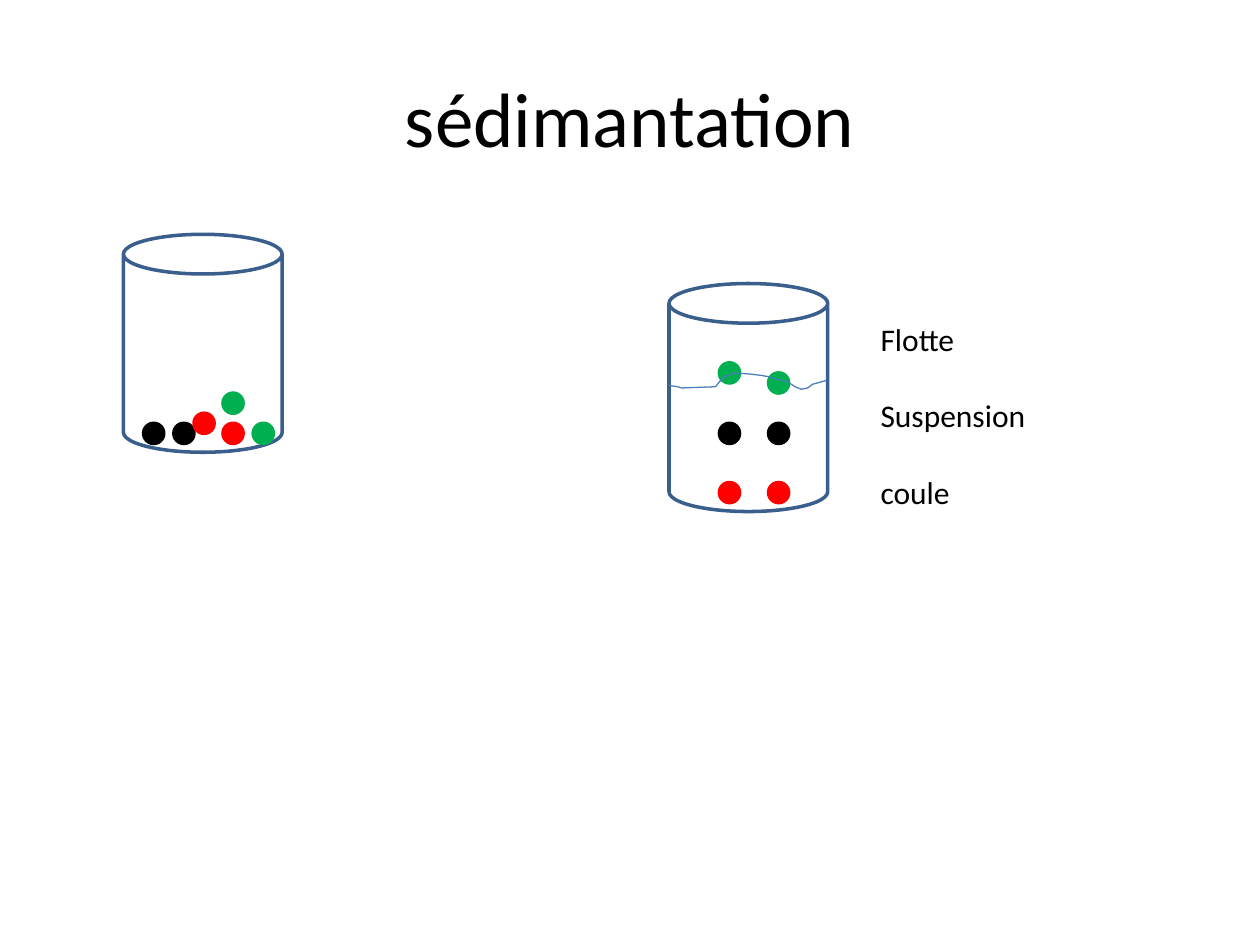
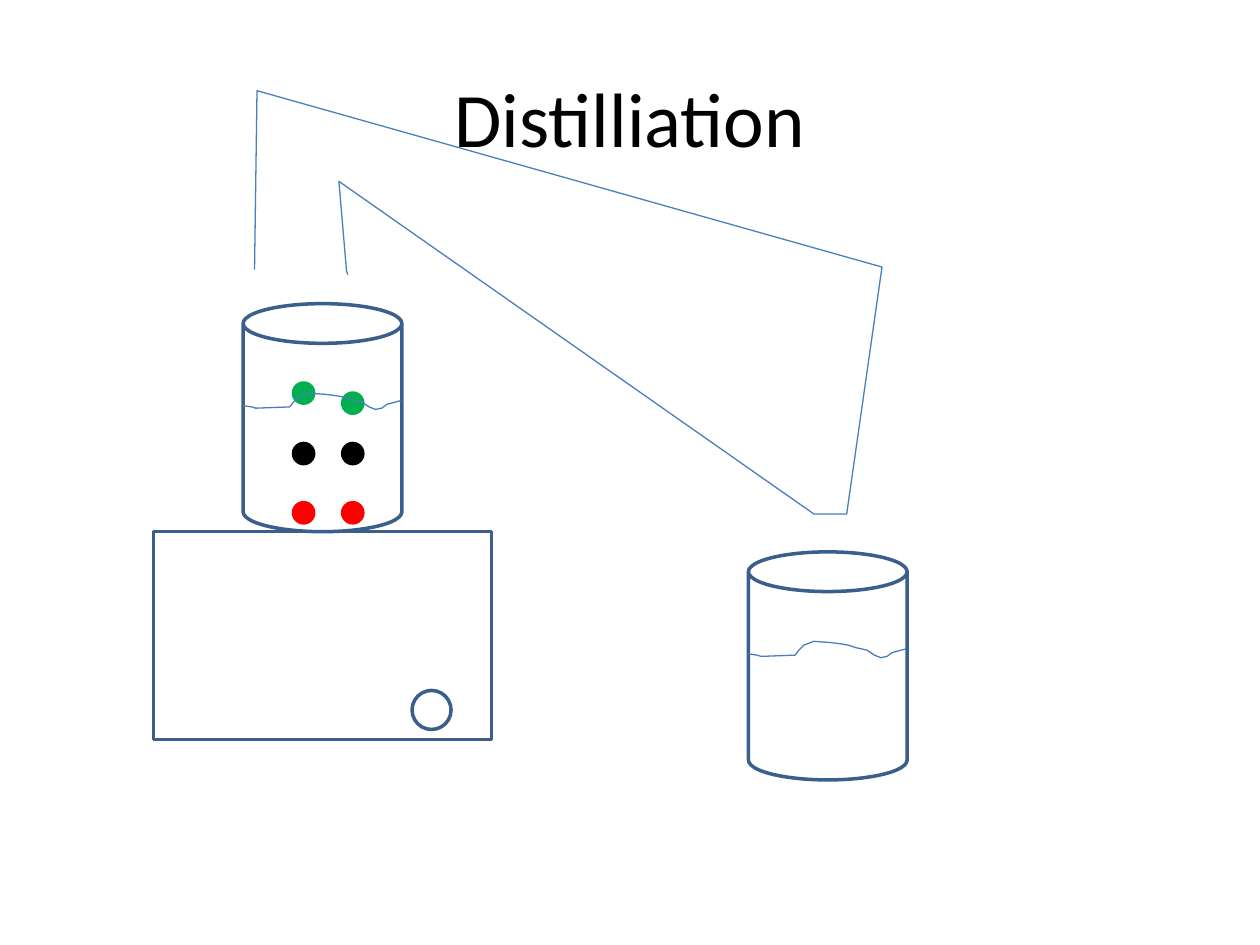
from pptx import Presentation
from pptx.dml.color import RGBColor
from pptx.enum.shapes import MSO_SHAPE
from pptx.enum.text import MSO_ANCHOR, PP_ALIGN
from pptx.util import Inches, Pt

BLACK, WHITE, GREEN, RED = "000000", "FFFFFF", "00B050", "FF0000"
OUTLINE, THIN_LINE = "3A5F8C", "4B7EBC"
FONT = "Calibri"
DOT = 0.16
BEAKER_W, BEAKER_H = 1.26, 1.81
WATER_DEPTH = 0.71

# Water surface, measured from its own top-left corner
WAVE = [(0, 0.1), (0.07, 0.11), (0.1, 0.12), (0.37, 0.11), (0.4, 0.07),
        (0.44, 0.03), (0.52, 0), (0.65, 0.01), (0.73, 0.02), (0.79, 0.03),
        (0.85, 0.05), (0.94, 0.07), (1, 0.11), (1.05, 0.13), (1.1, 0.12),
        (1.14, 0.09), (1.25, 0.06)]

# Particles in a filled beaker, measured from the beaker's corner
PARTICLES = [(0.4, 0.63, GREEN), (0.79, 0.71, GREEN),
             (0.4, 1.11, BLACK), (0.79, 1.11, BLACK),
             (0.4, 1.58, RED), (0.79, 1.58, RED)]


def color(hex_value):
    return RGBColor.from_string(hex_value)


class Deck:
    def __init__(self):
        self.prs = Presentation()
        self.prs.slide_width, self.prs.slide_height = Inches(10), Inches(7.5)
        self.slide = None

    def new_slide(self, title):
        self.slide = self.prs.slides.add_slide(self.prs.slide_layouts[6])
        return self.text([title], 0.5, 0.3, 9, 1.25, size=44,
                         align=PP_ALIGN.CENTER, anchor=MSO_ANCHOR.MIDDLE)

    def text(self, lines, x, y, w, h, size=18, gap=0,
             align=PP_ALIGN.LEFT, anchor=MSO_ANCHOR.TOP, wrap=True):
        box = self.slide.shapes.add_textbox(*map(Inches, (x, y, w, h)))
        tf = box.text_frame
        tf.word_wrap, tf.vertical_anchor = wrap, anchor
        for i, line in enumerate(lines):
            p = tf.paragraphs[0] if i == 0 else tf.add_paragraph()
            p.alignment = align
            p.space_before = Pt(gap if i else 0)
            r = p.add_run()
            r.text = line
            for name, value in {"name": FONT, "size": Pt(size)}.items():
                setattr(r.font, name, value)
            r.font.color.rgb = color(BLACK)

    def shape(self, kind, x, y, w, h, fill=WHITE, line=OUTLINE):
        sp = self.slide.shapes.add_shape(kind, *map(Inches, (x, y, w, h)))
        sp.shadow.inherit = False
        sp.fill.solid()
        sp.fill.fore_color.rgb = color(fill)
        sp.line.color.rgb = color(line)
        sp.line.width = Pt(2)

    def dot(self, x, y, hex_value):
        self.shape(MSO_SHAPE.OVAL, x, y, DOT, DOT, hex_value, hex_value)

    def outline(self, points):
        start, *rest = [(Inches(x), Inches(y)) for x, y in points]
        builder = self.slide.shapes.build_freeform(*start)
        builder.add_line_segments(rest, close=False)
        sp = builder.convert_to_shape()
        sp.shadow.inherit = False
        sp.fill.background()
        sp.line.color.rgb = color(THIN_LINE)
        sp.line.width = Pt(0.75)

    def beaker(self, x, y, particles=()):
        self.shape(MSO_SHAPE.CAN, x, y, BEAKER_W, BEAKER_H)
        for dx, dy, hex_value in particles:
            self.dot(x + dx, y + dy, hex_value)
        self.outline([(x + dx, y + WATER_DEPTH + dy) for dx, dy in WAVE])


def sedimentation(deck):
    deck.new_slide("sédimantation")
    # Dry beaker with a heap of particles
    deck.shape(MSO_SHAPE.CAN, 0.98, 1.86, BEAKER_W, 1.73)
    for x, y, hex_value in [(1.38, 3.36, BLACK), (1.77, 3.12, GREEN),
                            (1.54, 3.28, RED), (1.14, 3.36, BLACK),
                            (1.77, 3.36, RED), (2.01, 3.36, GREEN)]:
        deck.dot(x, y, hex_value)
    # Beaker with water and its labels
    deck.beaker(5.31, 2.25, PARTICLES)
    deck.text(["Flotte", "Suspension", "coule"], 6.89, 2.49, 1.36, 1.62,
              gap=22, wrap=False)


def distillation(deck):
    deck.new_slide("Distilliation")
    # Heater with its knob
    deck.shape(MSO_SHAPE.RECTANGLE, 1.22, 4.22, 2.68, 1.65)
    deck.shape(MSO_SHAPE.OVAL, 3.27, 5.48, 0.31, 0.31)
    # Heated beaker, condenser tube and receiving beaker
    deck.beaker(1.93, 2.41, PARTICLES)
    deck.outline([(2.02, 2.14), (2.04, 0.72), (7, 2.12), (6.72, 4.08),
                  (6.46, 4.08), (2.69, 1.44), (2.75, 2.15), (2.76, 2.18)])
    deck.beaker(5.94, 4.38)


def main():
    deck = Deck()
    sedimentation(deck)
    distillation(deck)
    deck.prs.save("out.pptx")


if __name__ == "__main__":
    main()
